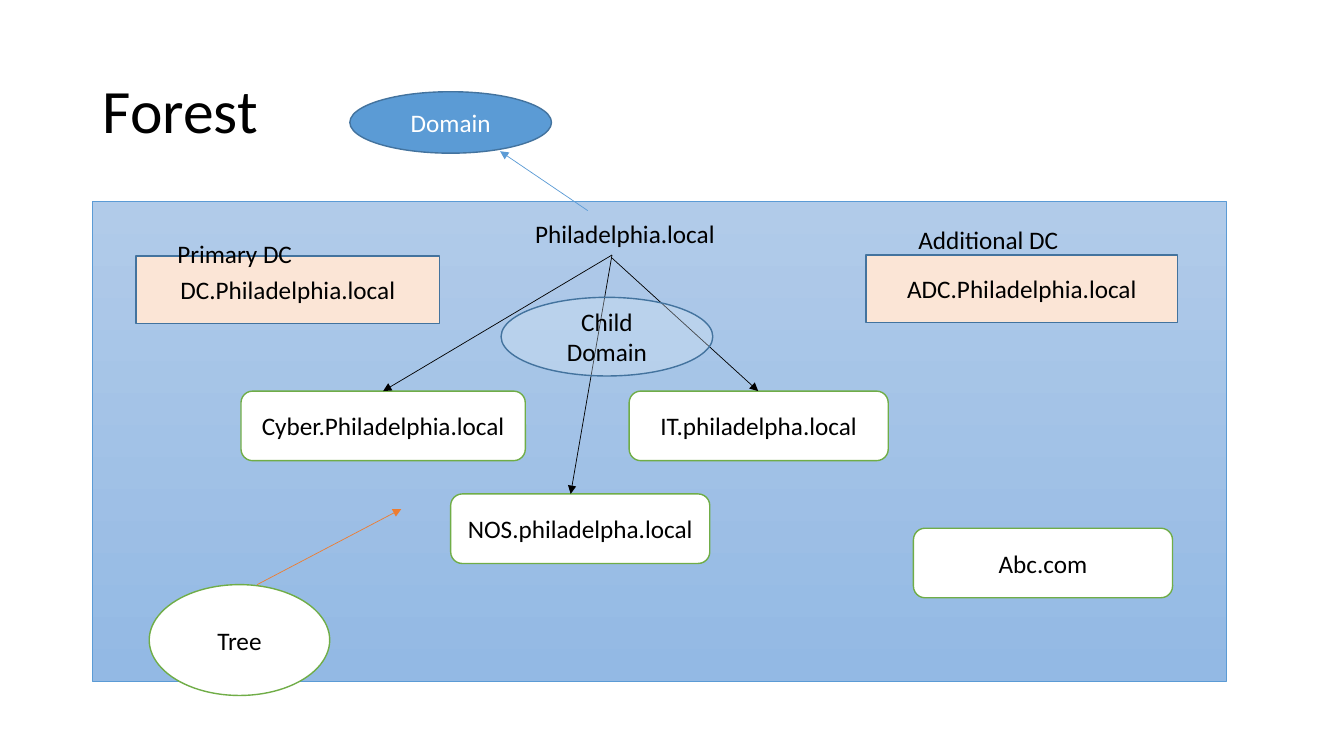
"""Build the Forest slide: a domain tree with its controllers and child domains."""
from lxml.etree import SubElement
from pptx import Presentation
from pptx.dml.color import RGBColor
from pptx.enum.shapes import MSO_CONNECTOR, MSO_SHAPE
from pptx.enum.text import MSO_ANCHOR, PP_ALIGN
from pptx.oxml.ns import qn
from pptx.util import Inches, Pt

COLORS = {
    "black": "000000", "white": "FFFFFF", "blue": "5B9BD5", "navy": "43739E",
    "peach": "FBE5D6", "pale": "DEEBF7", "green": "70AD47", "orange": "ED7D31",
    "panel_top": "B1CBE9", "panel_bottom": "93B9E4",
}
PANEL = (0.92, 2, 11.24, 4.76)
STYLES = {
    "domain": (MSO_SHAPE.OVAL, "blue", "navy", "white"),
    "controller": (MSO_SHAPE.RECTANGLE, "peach", "navy", "black"),
    "member": (MSO_SHAPE.ROUNDED_RECTANGLE, "white", "green", "black"),
    "tree": (MSO_SHAPE.OVAL, "white", "green", "black"),
    "child": (MSO_SHAPE.OVAL, "pale", "navy", "black"),
}
NODES = [
    ("DC.Philadelphia.local", "controller", (1.35, 2.54, 3.01, 0.67)),
    ("ADC.Philadelphia.local", "controller", (8.59, 2.53, 3.09, 0.67)),
    ("Domain", "domain", (3.47, 0.91, 2, 0.61)),
    ("Cyber.Philadelphia.local", "member", (2.39, 3.88, 2.82, 0.69)),
    ("IT.philadelpha.local", "member", (6.24, 3.88, 2.57, 0.69)),
    ("NOS.philadelpha.local", "member", (4.47, 4.9, 2.57, 0.69)),
    ("Abc.com", "member", (9.06, 5.24, 2.57, 0.69)),
    ("Tree", "tree", (1.48, 5.8, 1.79, 1.1)),
]
CHILD = ("Child Domain", "child", (4.97, 2.95, 2.1, 0.78))
ARROWS = [
    ((5.83, 2.09), (4.96, 1.5), "blue"),
    ((6.07, 2.53), (3.8, 3.88), "black"),
    ((6.07, 2.53), (5.66, 4.9), "black"),
    ((6.07, 2.56), (7.52, 3.88), "black"),
    ((2.55, 5.8), (3.98, 5.05), "orange"),
]
LABELS = [
    ("Philadelphia.local", (5.21, 2.12, 2.91, 0.4)),
    ("Primary DC", (1.66, 2.32, 2.32, 0.4)),
    ("Additional DC", (9.01, 2.18, 2.23, 0.4)),
]


def rgb(name):
    return RGBColor.from_string(COLORS[name])


def write(sp, text, size=18, color="black", align=PP_ALIGN.LEFT,
          anchor=MSO_ANCHOR.TOP, spacing=1.0):
    tf = sp.text_frame
    tf.word_wrap = True
    tf.vertical_anchor = anchor
    p = tf.paragraphs[0]
    p.alignment = align
    p.line_spacing = spacing
    r = p.add_run()
    r.text = text
    r.font.name = "Calibri"
    r.font.size = Pt(size)
    r.font.color.rgb = rgb(color)


def add_label(s, text, box, **fmt):
    write(s.shapes.add_textbox(*map(Inches, box)), text, **fmt)


def add_box(s, kind, box, line, width):
    sp = s.shapes.add_shape(kind, *map(Inches, box))
    sp.shadow.inherit = False
    sp.line.color.rgb = rgb(line)
    sp.line.width = Pt(width)
    return sp


def add_panel(s):
    sp = add_box(s, MSO_SHAPE.RECTANGLE, PANEL, "blue", 0.5)
    sp.fill.gradient()
    sp.fill.gradient_angle = 270
    for stop, name in zip(sp.fill.gradient_stops, ("panel_top", "panel_bottom")):
        stop.color.rgb = rgb(name)


def add_node(s, text, style, box, opacity=None):
    kind, fill, line, color = STYLES[style]
    sp = add_box(s, kind, box, line, 1)
    sp.fill.solid()
    sp.fill.fore_color.rgb = rgb(fill)
    if opacity is not None:
        clr = sp.fill._xPr.find(qn("a:solidFill"))[0]
        SubElement(clr, qn("a:alpha")).set("val", str(opacity * 1000))
    write(sp, text, color=color, align=PP_ALIGN.CENTER, anchor=MSO_ANCHOR.MIDDLE)


def add_arrow(s, start, end, color):
    cx = s.shapes.add_connector(MSO_CONNECTOR.STRAIGHT, *map(Inches, start + end))
    cx.line.color.rgb = rgb(color)
    cx.line.width = Pt(0.5)
    SubElement(cx.line._get_or_add_ln(), qn("a:tailEnd")).set("type", "triangle")
    SubElement(cx._element.spPr, qn("a:effectLst"))


def main():
    prs = Presentation()
    prs.slide_width, prs.slide_height = Inches(13.33), Inches(7.5)
    s = prs.slides.add_slide(prs.slide_layouts[6])
    add_label(s, "Forest", (0.92, 0.4, 11.5, 1.45), size=44,
              anchor=MSO_ANCHOR.MIDDLE, spacing=0.9)
    add_panel(s)
    for node in NODES:
        add_node(s, *node)
    for arrow in ARROWS:
        add_arrow(s, *arrow)
    add_node(s, *CHILD, opacity=31)
    for label in LABELS:
        add_label(s, *label)
    prs.save("out.pptx")


if __name__ == "__main__":
    main()
